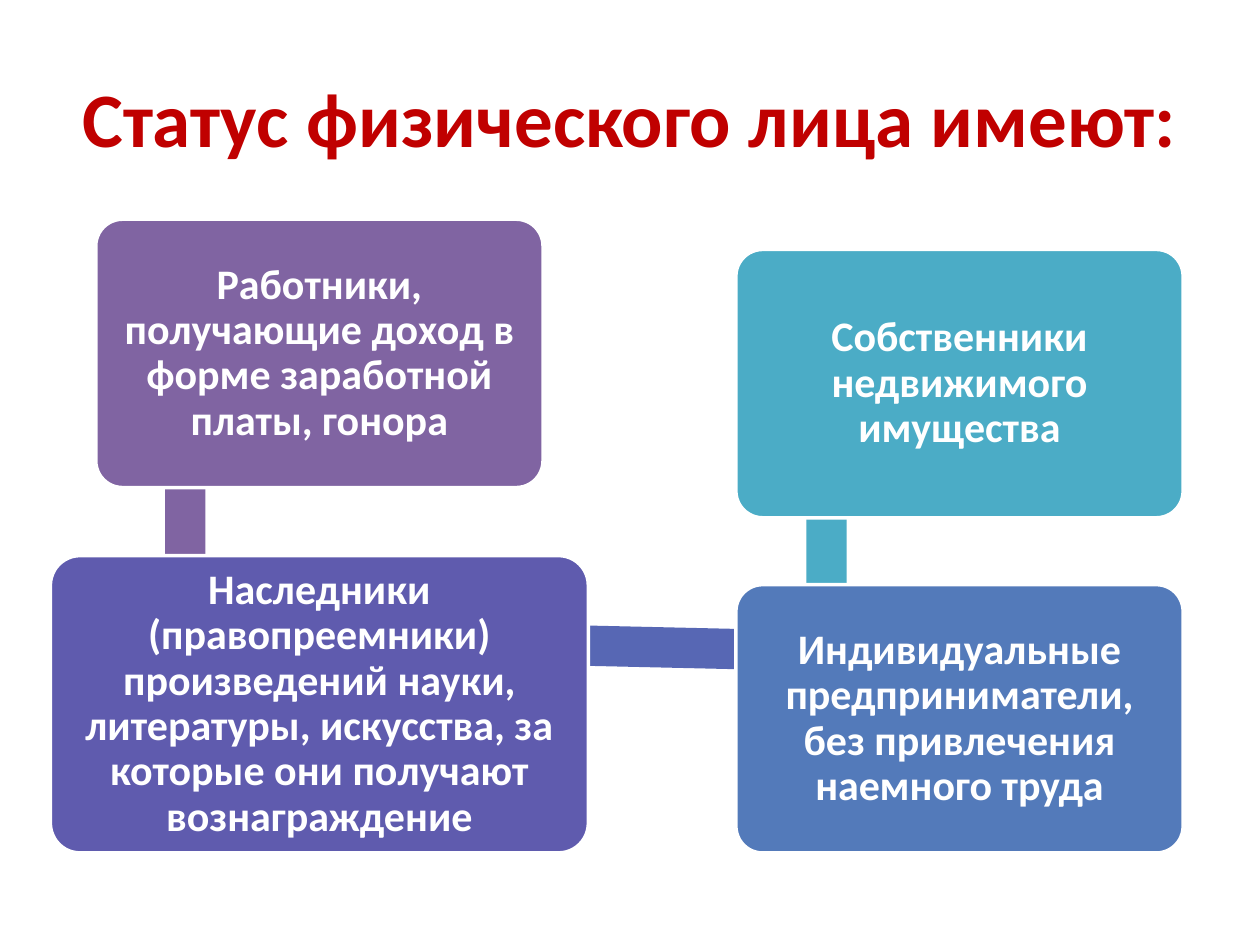
import pptx
import pptx.util
import pptx.dml.color
import pptx.enum.shapes
import pptx.enum.text
from dataclasses import dataclass

PX = 9144  # EMU per px, 100 px to the inch
SHAPE = pptx.enum.shapes.MSO_SHAPE


@dataclass(frozen=True)
class Theme:
    font: str = "Calibri"
    title_size: int = 44
    card_size: int = 24
    title: str = "C00000"
    white: str = "FFFFFF"
    purple: str = "8064A2"
    indigo: str = "5F5BAE"
    indigo_blue: str = "5767B4"
    blue: str = "537ABA"
    teal: str = "4BACC6"


THEME = Theme()


def rgb(color):
    return pptx.dml.color.RGBColor.from_string(color)


def emu(*lengths):
    return [pptx.util.Emu(round(n * PX)) for n in lengths]


def write(s, text, size, color, inset):
    tf = s.text_frame
    tf.word_wrap = True
    tf.vertical_anchor = pptx.enum.text.MSO_ANCHOR.MIDDLE
    tf.margin_left = tf.margin_right = emu(10)[0]
    tf.margin_top = tf.margin_bottom = emu(inset)[0]
    p = tf.paragraphs[0]
    p.text = text
    p.alignment = pptx.enum.text.PP_ALIGN.CENTER
    p.font.name = THEME.font
    p.font.size = pptx.util.Pt(size)
    p.font.bold = True
    p.font.color.rgb = rgb(color)
    return p


def add_block(slide, kind, box, fill):
    s = slide.shapes.add_shape(kind, *emu(*box))
    s.shadow.inherit = False
    s.fill.solid()
    s.fill.fore_color.rgb = rgb(fill)
    s.line.fill.background()
    return s


def add_title(slide, box, text):
    s = slide.shapes.add_textbox(*emu(*box))
    write(s, text, THEME.title_size, THEME.title, 5)


def add_link(slide, center, length, angle, fill):
    thickness = 32
    x, y = center
    box = (x - length / 2, y - thickness / 2, length, thickness)
    add_block(slide, SHAPE.RECTANGLE, box, fill).rotation = angle


def add_card(slide, box, fill, text):
    s = add_block(slide, SHAPE.ROUNDED_RECTANGLE, box, fill)
    s.adjustments[0] = 0.1
    s.line.color.rgb = rgb(THEME.white)
    s.line.width = pptx.util.Pt(2)
    write(s, text, THEME.card_size, THEME.white, 10).line_spacing = 0.9


def add_diagram(slide, box):
    left, top, width, height = box
    card_w, card_h = 355, 213
    wide_w, wide_h = 427, 236
    right_x = left + width - card_w
    bottom = top + height

    # Bands between the cards, partly hidden behind them
    add_link(slide, (left + 107, top + 192), 276, 90, THEME.purple)
    add_link(slide, (left + 362, top + 337), 507, 1.3, THEME.indigo_blue)
    add_link(slide, (right_x + 72, top + 209), 265, 270, THEME.teal)

    # Cards, in the order the bands join them
    cards = [
        ((left + (wide_w - card_w) / 2, top, card_w, card_h), THEME.purple,
         "Работники, получающие доход в форме заработной платы, гонора"),
        ((left, bottom - wide_h, wide_w, wide_h), THEME.indigo,
         "Наследники (правопреемники) произведений науки, литературы, "
         "искусства, за которые они получают вознаграждение"),
        ((right_x, bottom - card_h, card_w, card_h), THEME.blue,
         "Индивидуальные предприниматели, без привлечения наемного труда"),
        ((right_x, top + 24, card_w, card_h), THEME.teal,
         "Собственники недвижимого имущества"),
    ]
    for card in cards:
        add_card(slide, *card)


def main():
    prs = pptx.Presentation()
    prs.slide_width, prs.slide_height = emu(1000, 750)
    slide = prs.slides.add_slide(prs.slide_layouts[6])
    add_title(slide, (50, 30, 900, 125), "Статус физического лица имеют:")
    add_diagram(slide, (40, 174, 899, 503))
    prs.save("out.pptx")


if __name__ == "__main__":
    main()
